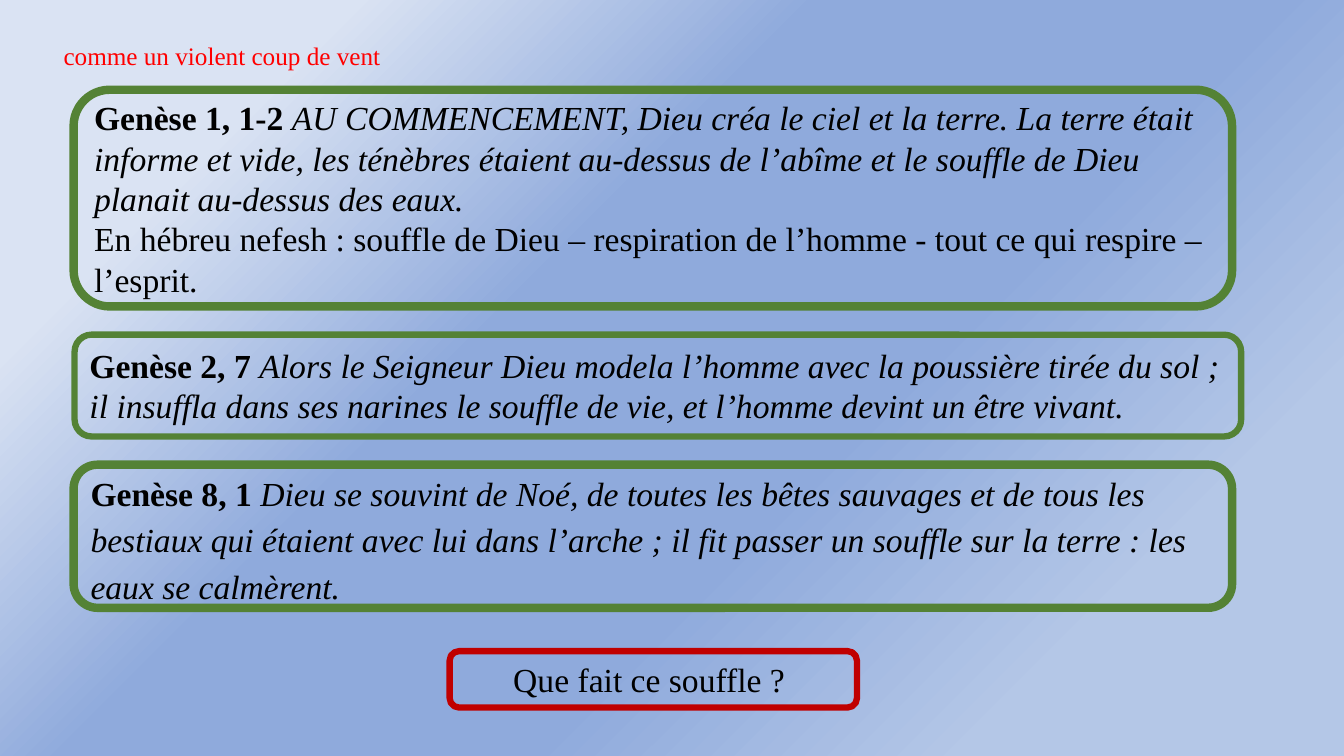
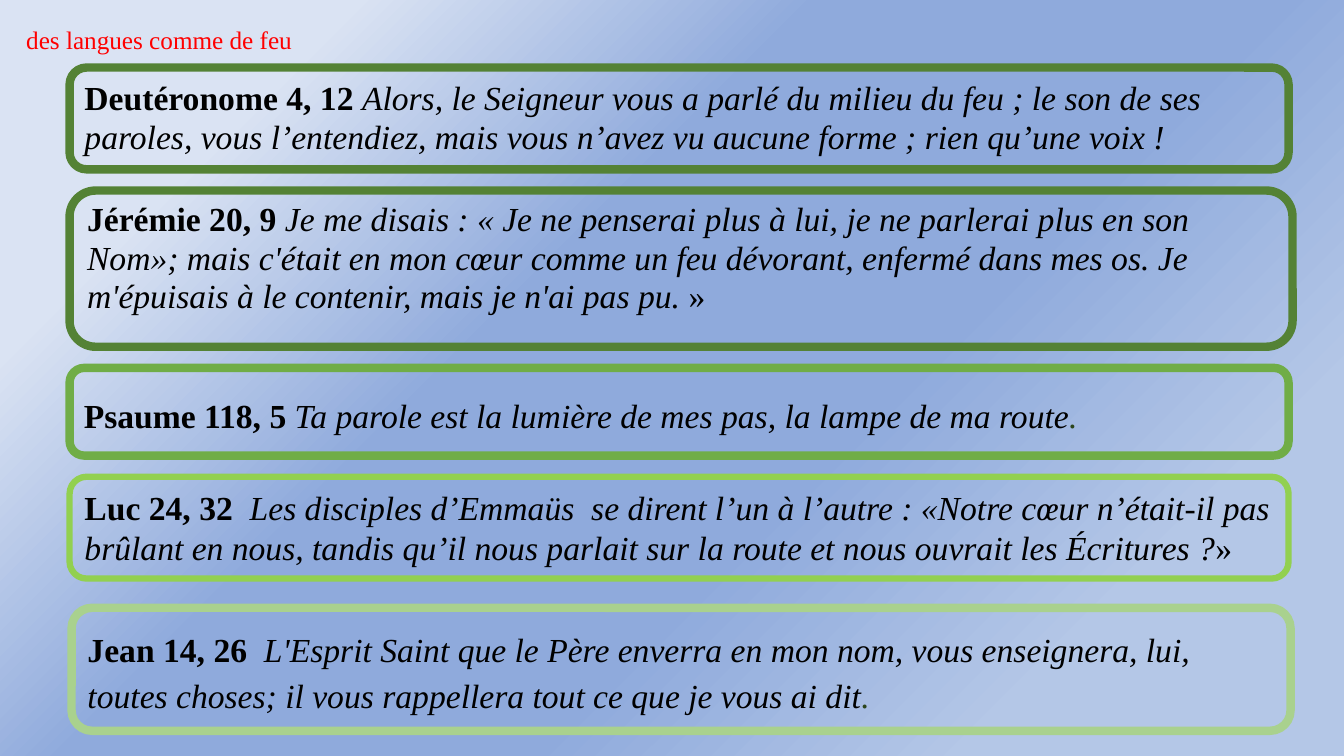
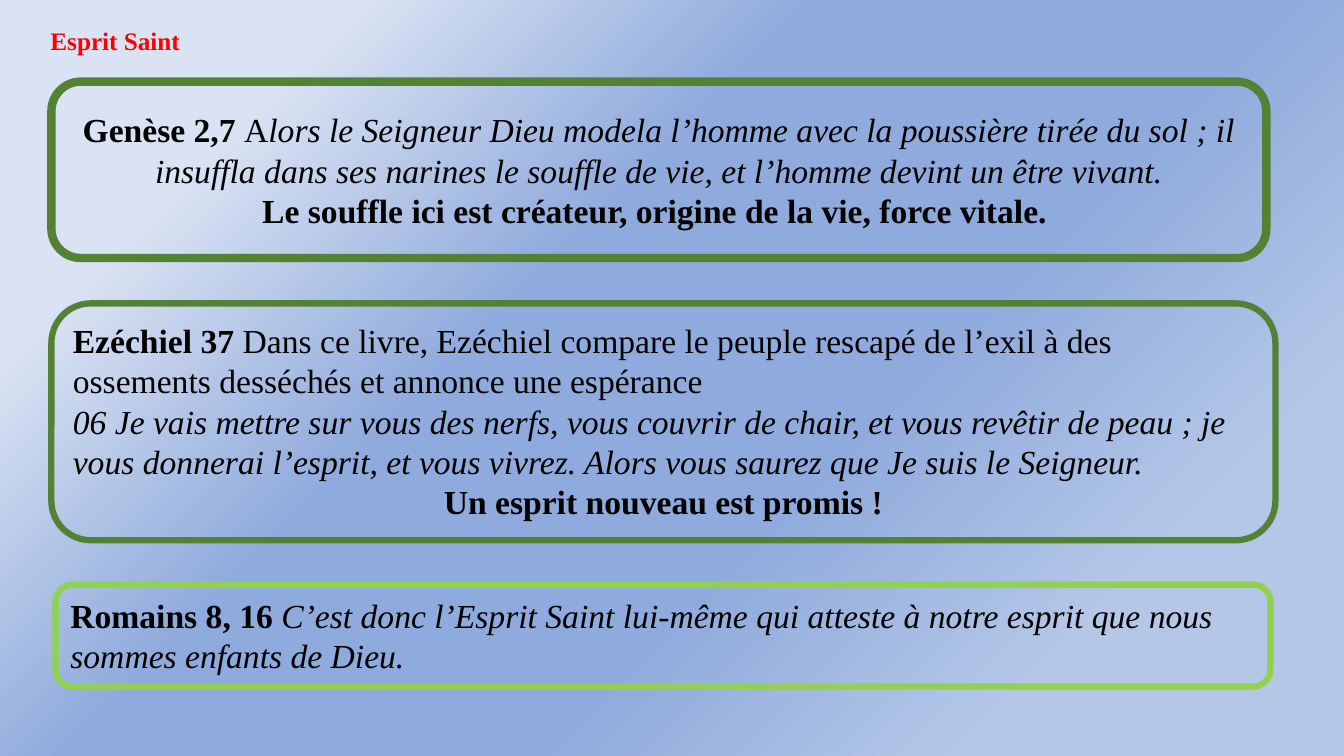
import pptx
import pptx.dml.color
import pptx.enum.shapes
import pptx.enum.text
import pptx.oxml
import pptx.oxml.ns
import pptx.util
from pptx.util import Inches

ALIGN = pptx.enum.text.PP_ALIGN
ANCHOR = pptx.enum.text.MSO_ANCHOR
AUTO_SIZE = pptx.enum.text.MSO_AUTO_SIZE

FONT = "Times New Roman"
BLACK, RED, DARK_RED = "000000", "FF0000", "C00000"
DARK_GREEN, GREEN, LIME, PALE_GREEN = "548235", "70AD47", "92D050", "A9D18E"
FULL_STOP_GREEN = "2C451B"
BACKGROUND_STOPS = [(18, "B4C7E7"), (39, "8FAADC"), (61, "8FAADC"), (83, "DAE3F3")]


def rgb(value):
    return pptx.dml.color.RGBColor.from_string(value)


def write(paragraph, text, size=24, color=BLACK, bold=False, italic=False):
    """Add one formatted run to a paragraph."""
    run = paragraph.add_run()
    run.text = text
    font = run.font
    font.name, font.size = FONT, pptx.util.Pt(size)
    font.bold, font.italic = bold, italic
    font.color.rgb = rgb(color)


def plain(text, **style):
    return text, style


def bold(text):
    return plain(text, bold=True)


def italic(text, **style):
    return plain(text, italic=True, **style)


class Deck:
    def __init__(self):
        self.prs = pptx.Presentation()
        self.prs.slide_width, self.prs.slide_height = Inches(13.33), Inches(7.5)
        self.slide = None
        self.paint_background()

    def paint_background(self):
        """Give the master the diagonal blue gradient."""
        master = self.prs.slide_master
        fill = master.background.fill
        fill.gradient()
        fill.gradient_angle = 135
        stops = next(master.element.iter(pptx.oxml.ns.qn("a:gsLst")))
        for stop in list(stops):
            stops.remove(stop)
        for position, color in BACKGROUND_STOPS:
            stops.append(pptx.oxml.parse_xml(
                f'<a:gs {pptx.oxml.ns.nsdecls("a")} pos="{position * 1000}">'
                f'<a:srgbClr val="{color}"/></a:gs>'))

    def new_slide(self, title, at, spacing=1.0, after=0, **style):
        """Start a slide with its small red heading."""
        self.slide = self.prs.slides.add_slide(self.prs.slide_layouts[5])
        heading = self.slide.shapes.title
        heading.left, heading.top, heading.width, heading.height = map(Inches, at)
        self.fill_text(heading, [[plain(title, size=18, color=RED, **style)]],
                       ANCHOR.TOP, spacing=spacing, after=after)

    def fill_text(self, shape, paragraphs, anchor, grow=False, spacing=1.0, after=0,
                  aligns=(), top_inset=0.05):
        frame = shape.text_frame
        frame.word_wrap = True
        frame.auto_size = AUTO_SIZE.SHAPE_TO_FIT_TEXT if grow else AUTO_SIZE.NONE
        frame.vertical_anchor = anchor
        frame.margin_left = frame.margin_right = Inches(0.1)
        frame.margin_top, frame.margin_bottom = Inches(top_inset), Inches(0.05)
        for index, runs in enumerate(paragraphs):
            paragraph = frame.add_paragraph() if index else frame.paragraphs[0]
            paragraph.alignment = aligns[index] if aligns else ALIGN.LEFT
            paragraph.line_spacing = spacing
            paragraph.space_after = pptx.util.Pt(after)
            for text, style in runs:
                write(paragraph, text, **style)

    def box(self, at, border, *paragraphs, weight=6, anchor=ANCHOR.MIDDLE, **layout):
        """Add a rounded outline holding paragraphs, each a list of runs."""
        frame = self.slide.shapes.add_shape(
            pptx.enum.shapes.MSO_SHAPE.ROUNDED_RECTANGLE, *map(Inches, at))
        frame.shadow.inherit = False
        frame.fill.background()
        frame.line.color.rgb = rgb(border)
        frame.line.width = pptx.util.Pt(weight)
        self.fill_text(frame, paragraphs, anchor, **layout)

    def fitted_box(self, at, border, *paragraphs, **layout):
        """Add a thinner outline that grows with its text."""
        self.box(at, border, *paragraphs, weight=4.5, anchor=ANCHOR.TOP, grow=True, **layout)


def wind_slide(deck):
    deck.new_slide("comme un violent coup de vent", (0.53, 0.31, 3.81, 0.43),
                   spacing=1.15, after=10)
    deck.box(
        (0.73, 0.89, 11.49, 2.15), DARK_GREEN,
        [bold("Genèse 1, 1-2 "),
         italic("AU COMMENCEMENT, Dieu créa le ciel et la terre. La terre était informe et vide, "
                "les ténèbres étaient au-dessus de l’abîme et le souffle de Dieu planait "
                "au-dessus des eaux.")],
        [plain("En hébreu nefesh : souffle de Dieu – respiration de l’homme - tout ce qui "
               "respire – l’esprit.")])
    deck.fitted_box(
        (0.74, 3.32, 11.57, 1.01), DARK_GREEN,
        [bold("Genèse 2, 7 "),
         italic("Alors le Seigneur Dieu modela l’homme avec la poussière tirée du sol ; il "
                "insuffla dans ses narines le souffle de vie, et l’homme devint un être vivant.")])
    deck.box(
        (0.73, 4.61, 11.49, 1.42), DARK_GREEN,
        [bold("Genèse 8, 1 "),
         italic("Dieu se souvint de Noé, de toutes les bêtes sauvages et de tous les bestiaux qui "
                "étaient avec lui dans l’arche ; il fit passer un souffle sur la terre : les eaux "
                "se calmèrent.")],
        spacing=1.15, after=10)
    deck.fitted_box((4.46, 6.46, 4.04, 0.56), DARK_RED,
                    [plain("Que fait ce souffle ? ")], aligns=[ALIGN.CENTER])


def fire_slide(deck):
    deck.new_slide("des langues comme de feu", (0.16, 0.19, 3.07, 0.4))
    deck.box(
        (0.69, 0.67, 12.09, 1.01), DARK_GREEN,
        [bold("Deutéronome 4, 12 "),
         italic("Alors, le Seigneur vous a parlé du milieu du feu ; le son de ses paroles, vous "
                "l’entendiez, mais vous n’avez vu aucune forme ; rien qu’une voix !")],
        spacing=0.95, after=10)
    deck.box(
        (0.69, 1.89, 12.13, 1.55), DARK_GREEN,
        [bold("Jérémie 20, 9 "),
         italic("Je me disais : « Je ne penserai plus à lui, je ne parlerai plus en son Nom»; mais "
                "c'était en mon cœur comme un feu dévorant, enfermé dans mes os. Je m'épuisais à "
                "le contenir, mais je n'ai pas pu. "),
         plain("»")],
        spacing=0.95, anchor=ANCHOR.TOP, top_inset=0.03)
    deck.box(
        (0.69, 3.65, 12.09, 0.87), GREEN,
        [bold("Psaume 118, 5 "),
         italic("Ta parole est la lumière de mes pas, la lampe de ma route"),
         italic(".", color=FULL_STOP_GREEN)],
        spacing=1.15, after=10)
    deck.fitted_box(
        (0.69, 4.73, 12.09, 1.01), LIME,
        [bold("Luc 24, 32  "),
         italic("Les disciples d’Emmaüs  se dirent l’un à l’autre : «Notre cœur n’était-il pas "
                "brûlant en nous, tandis qu’il nous parlait sur la route et nous ouvrait les "
                "Écritures ?"),
         plain("»")])
    deck.box(
        (0.71, 6.03, 12.09, 1.22), PALE_GREEN,
        [bold("Jean 14, 26  "),
         italic("L'Esprit Saint que le Père enverra en mon nom, vous enseignera, lui, toutes "
                "choses; il vous rappellera tout ce que je vous ai dit"),
         italic(".", color=FULL_STOP_GREEN)],
        spacing=1.15, after=10)


def spirit_slide(deck):
    deck.new_slide("Esprit Saint", (0.4, 0.2, 1.93, 0.4), bold=True)
    deck.box(
        (0.51, 0.81, 12.05, 1.75), DARK_GREEN,
        [bold("Genèse 2,7 "), plain("A"),
         italic("lors le Seigneur Dieu modela l’homme avec la poussière tirée du sol ; il insuffla "
                "dans ses narines le souffle de vie, et l’homme devint un être vivant.")],
        [bold("Le souffle ici est créateur, origine de la vie, force vitale. ")],
        aligns=[ALIGN.CENTER] * 2)
    deck.fitted_box(
        (0.51, 3.01, 12.14, 2.35), DARK_GREEN,
        [bold("Ezéchiel 37 "),
         plain("Dans ce livre, Ezéchiel compare le peuple rescapé de l’exil à des ossements "
               "desséchés et annonce une espérance")],
        [italic("06 Je vais mettre sur vous des nerfs, vous couvrir de chair, et vous revêtir de "
                "peau ; je vous donnerai l’esprit, et vous vivrez. Alors vous saurez que Je suis "
                "le Seigneur.")],
        [bold("Un esprit nouveau est promis !")],
        aligns=[ALIGN.LEFT, ALIGN.LEFT, ALIGN.CENTER])
    deck.fitted_box(
        (0.55, 5.8, 12.05, 1.01), LIME,
        [bold("Romains 8, 16 "),
         italic("C’est donc l’Esprit Saint lui-même qui atteste à notre esprit que nous sommes "
                "enfants de Dieu.")])


def main():
    deck = Deck()
    for build in (wind_slide, fire_slide, spirit_slide):
        build(deck)
    deck.prs.save("out.pptx")


if __name__ == "__main__":
    main()
